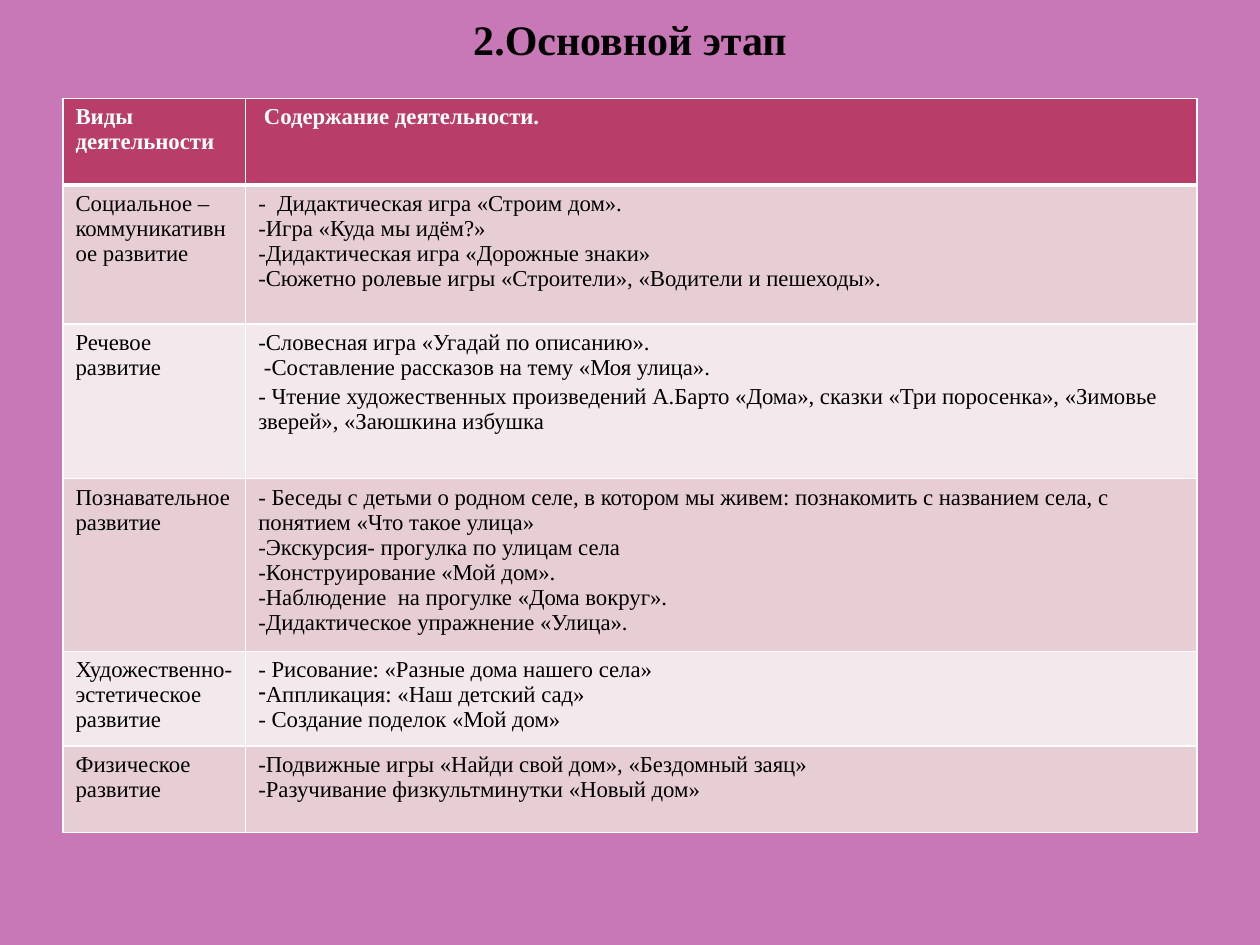
from lxml import etree
from pptx import Presentation
from pptx.dml.color import RGBColor
from pptx.enum.text import MSO_ANCHOR, PP_ALIGN
from pptx.oxml.ns import qn
from pptx.util import Inches, Pt

MID = MSO_ANCHOR.MIDDLE
MID_X = PP_ALIGN.CENTER
LEFT = PP_ALIGN.LEFT

THEME = {
    "font": "Times New Roman",
    "back": "C877B7",
    "head": "B83D68",
    "bands": ["F3E8EB", "E6CED4"],
    "line": "FFFFFF",
    "ink": "000000",
    "title": Pt(24),
    "body": Pt(13),
    "gap": Pt(2.6),
}

ROWS = [
    (0.69, "Виды деятельности", [" Содержание деятельности."]),
    (1.1, "Социальное –коммуникативное развитие", [
        "-  Дидактическая игра «Строим дом».",
        "-Игра «Куда мы идём?»",
        "-Дидактическая игра «Дорожные знаки»",
        "-Сюжетно ролевые игры «Строители», «Водители и пешеходы».",
    ]),
    (1.23, "Речевое развитие", [
        "-Словесная игра «Угадай по описанию».",
        " -Составление рассказов на тему «Моя улица».",
        "- Чтение художественных произведений А.Барто «Дома», сказки «Три поросенка», "
        "«Зимовье зверей», «Заюшкина избушка",
    ]),
    (1.37, "Познавательное развитие", [
        "- Беседы с детьми о родном селе, в котором мы живем: познакомить с названием села, "
        "с понятием «Что такое улица»",
        "-Экскурсия- прогулка по улицам села",
        "-Конструирование «Мой дом».",
        "-Наблюдение  на прогулке «Дома вокруг».",
        "-Дидактическое упражнение «Улица».",
    ]),
    (0.75, "Художественно-эстетическое развитие", [
        "- Рисование: «Разные дома нашего села»",
        "Аппликация: «Наш детский сад»",
        "- Создание поделок «Мой дом»",
    ]),
    (0.69, "Физическое развитие", [
        "-Подвижные игры «Найди свой дом», «Бездомный заяц»",
        "-Разучивание физкультминутки «Новый дом»",
    ]),
]


def write(frame, lines, size, tint, bold, align):
    frame.text = "\n".join(lines)
    for par in frame.paragraphs:
        par.alignment = align
        font = par.runs[0].font
        for key, val in {"name": THEME["font"], "size": size, "bold": bold}.items():
            setattr(font, key, val)
        font.color.rgb = RGBColor.from_string(tint)


def edge(cell, side, width):
    line = etree.SubElement(cell._tc.get_or_add_tcPr(), qn("a:ln" + side), w=str(Pt(width)))
    fill = etree.SubElement(line, qn("a:solidFill"))
    etree.SubElement(fill, qn("a:srgbClr"), val=THEME["line"])


deck = Presentation()
deck.slide_width, deck.slide_height = Inches(10), Inches(7.5)
wide = deck.slide_width
slide = deck.slides.add_slide(deck.slide_layouts[5])
slide.background.fill.solid()
slide.background.fill.fore_color.rgb = RGBColor.from_string(THEME["back"])

title = slide.shapes.title
place = {"left": int(wide * 0.05), "top": 0, "width": int(wide * 0.9), "height": Inches(0.62)}
for key, val in place.items():
    setattr(title, key, val)
title.text_frame.vertical_anchor = MID
write(title.text_frame, ["2.Основной этап"], THEME["title"], THEME["ink"], True, MID_X)

tall = Inches(sum(row[0] for row in ROWS))
table = slide.shapes.add_table(
    len(ROWS), 2, place["left"], Inches(0.78), place["width"], tall
).table
for col, share in zip(table.columns, (0.145, 0.755)):
    col.width = int(wide * share)

for num, (high, kind, items) in enumerate(ROWS):
    table.rows[num].height = Inches(high)
    head = num == 0
    tint = THEME["line"] if head else THEME["ink"]
    fill = THEME["head"] if head else THEME["bands"][num % 2]
    for cell, lines in zip(table.rows[num].cells, ([kind], items)):
        write(cell.text_frame, lines, THEME["body"], tint, head, LEFT)
        for side in "LRTB":
            thick = (head and side == "B") or (num == 1 and side == "T")
            edge(cell, side, 3 if thick else 1)
        cell.fill.solid()
        cell.fill.fore_color.rgb = RGBColor.from_string(fill)

table.cell(2, 1).text_frame.paragraphs[2].space_before = THEME["gap"]
craft = table.cell(4, 1).text_frame.paragraphs[1]
etree.SubElement(craft._p.get_or_add_pPr(), qn("a:buChar"), char="-")

deck.save("out.pptx")
